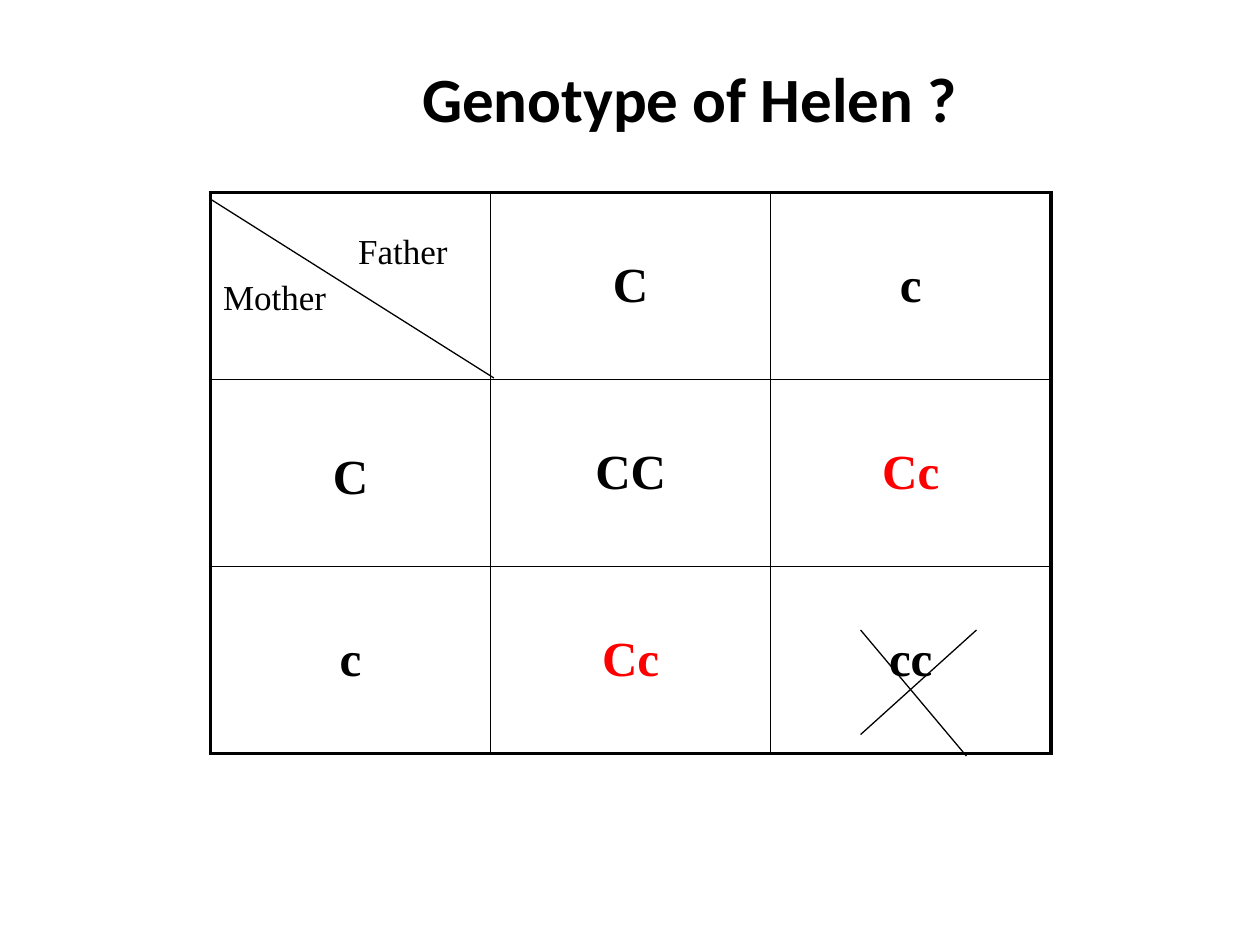
from lxml.etree import SubElement
from pptx import Presentation
from pptx.dml.color import RGBColor
from pptx.enum.shapes import MSO_CONNECTOR
from pptx.enum.text import MSO_ANCHOR, PP_ALIGN
from pptx.oxml import parse_xml
from pptx.oxml.ns import nsdecls, qn
from pptx.util import Inches, Pt

COLORS = {"ink": "000000", "carrier": "FF0000"}
FORMATS = {
    "title": {"name": "Calibri", "size": Pt(36), "bold": True},
    "parent": {"name": "Times New Roman", "size": Pt(20), "bold": False},
    "allele": {"name": "Times New Roman", "size": Pt(28), "bold": True},
}
GENOTYPES = [["", "C", "c"], ["C", "CC", "Cc"], ["c", "Cc", "cc"]]
STRIKES = [
    (1.67, 1.58, 3.92, 3),
    (6.83, 5, 7.67, 6),
    (6.83, 5.83, 7.75, 5),
]


def write(para, text, style, color="ink"):
    span = para.add_run()
    span.text = text
    for key, value in FORMATS[style].items():
        setattr(span.font, key, value)
    span.font.color.rgb = RGBColor.from_string(COLORS[color])


def set_borders(cell, row, column):
    outer = {"L": column == 0, "R": column == 2, "T": row == 0, "B": row == 2}
    for index, (side, thick) in enumerate(outer.items()):
        width = Pt(2.25 if thick else 1)
        border = parse_xml(
            f'<a:ln{side} {nsdecls("a")} w="{width}"><a:solidFill>'
            f'<a:srgbClr val="{COLORS["ink"]}"/></a:solidFill></a:ln{side}>'
        )
        cell._tc.get_or_add_tcPr().insert(index, border)


deck = Presentation()
deck.slide_width, deck.slide_height = Inches(10), Inches(7.5)
page = deck.slides.add_slide(deck.slide_layouts[5])

title = page.shapes.title
title.left, title.top = Inches(3.25), Inches(0.42)
title.width, title.height = Inches(4.55), Inches(0.7)
title.text_frame.word_wrap = False
title.text_frame.vertical_anchor = MSO_ANCHOR.TOP
title_para = title.text_frame.paragraphs[0]
title_para.alignment = PP_ALIGN.LEFT
write(title_para, "Genotype of Helen ?", "title")

frame = page.shapes.add_table(
    3, 3, Inches(1.67), Inches(1.53), Inches(6.67), Inches(4.45)
)
square = frame.table
square.first_row = square.horz_banding = False
for r, genotypes in enumerate(GENOTYPES):
    for c, genotype in enumerate(genotypes):
        cell = square.cell(r, c)
        cell.fill.background()
        set_borders(cell, r, c)
        if genotype:
            cell.vertical_anchor = MSO_ANCHOR.MIDDLE
            para = cell.text_frame.paragraphs[0]
            para.alignment = PP_ALIGN.CENTER
            write(para, genotype, "allele", "carrier" if genotype == "Cc" else "ink")
square.cell(1, 0).margin_top = Inches(0.12)

corner = square.cell(0, 0)
corner.margin_top, corner.margin_right = Inches(0.32), Inches(0.34)
father = corner.text_frame.paragraphs[0]
father.alignment = PP_ALIGN.RIGHT
write(father, "Father", "parent")
mother = corner.text_frame.add_paragraph()
mother.alignment = PP_ALIGN.LEFT
mother.space_before = Pt(4)
write(mother, "Mother", "parent")

for points in STRIKES:
    strike = page.shapes.add_connector(
        MSO_CONNECTOR.STRAIGHT, *(Inches(point) for point in points)
    )
    strike.line.width = Pt(0.75)
    strike.line.color.rgb = RGBColor.from_string(COLORS["ink"])
    SubElement(strike._element.spPr, qn("a:effectLst"))

deck.save("out.pptx")
